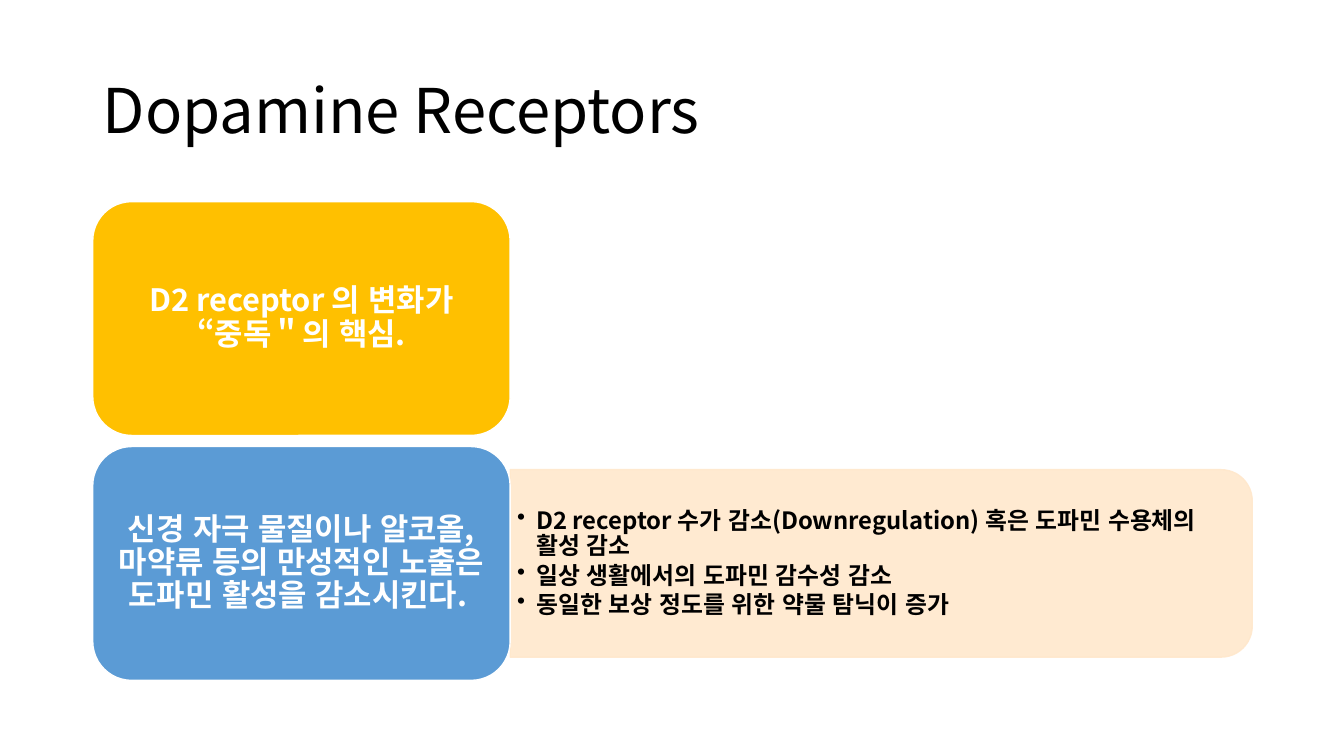
from lxml.etree import SubElement
from pptx import Presentation
from pptx.dml.color import RGBColor
from pptx.enum.lang import MSO_LANGUAGE_ID as Language
from pptx.enum.shapes import MSO_SHAPE as Shape
from pptx.enum.text import MSO_ANCHOR as Anchor, PP_ALIGN as Align
from pptx.oxml.ns import qn
from pptx.util import Inches, Pt

FONT = "Noto Sans CJK KR"
BLACK = RGBColor(0x00, 0x00, 0x00)
WHITE = RGBColor(0xFF, 0xFF, 0xFF)
GOLD = RGBColor(0xFF, 0xC0, 0x00)
BLUE = RGBColor(0x5B, 0x9B, 0xD5)
PEACH = RGBColor(0xFF, 0xE8, 0xCC)

LEFT, CARDS_TOP = 0.92, 2
CARD_WIDTH, CARD_HEIGHT, CARD_PITCH = 4.14, 2.32, 2.43
PANEL_WIDTH, PANEL_HEIGHT = 7.36, 1.86

CARDS = [
    (GOLD, "D2 receptor 의 변화가 “중독＂의 핵심.", []),
    (BLUE, "신경 자극 물질이나 알코올, 마약류 등의 만성적인 노출은 도파민 활성을 감소시킨다. ", [
        "D2 receptor 수가 감소(Downregulation) 혹은 도파민 수용체의 활성 감소",
        "일상 생활에서의 도파민 감수성 감소",
        "동일한 보상 정도를 위한 약물 탐닉이 증가",
    ]),
]


def set_frame(frame, side=0.1, edge=0.05):
    """Wrap the text, centre it vertically and set its margins."""
    frame.word_wrap = True
    frame.vertical_anchor = Anchor.MIDDLE
    frame.margin_left = frame.margin_right = Inches(side)
    frame.margin_top = frame.margin_bottom = Inches(edge)


def write(paragraph, text, size, color, bold=False, align=Align.LEFT):
    """Write one run with Latin and East Asian fonts."""
    paragraph.alignment = align
    paragraph.line_spacing = 0.9
    run = paragraph.add_run()
    run.text = text
    font = run.font
    font.name, font.size, font.bold = FONT, Pt(size), bold
    font.color.rgb = color
    font.language_id = Language.KOREAN
    SubElement(font._element, qn("a:ea")).set("typeface", FONT)


def add_bullet(paragraph):
    """Give the paragraph a bullet with a hanging indent."""
    properties = paragraph._p.get_or_add_pPr()
    properties.set("marL", str(Inches(0.19)))
    properties.set("indent", str(Inches(-0.19)))
    SubElement(properties, qn("a:buChar")).set("char", "•")


def add_block(slide, preset, box, fill, line):
    """Add a filled shape without a shadow."""
    shape = slide.shapes.add_shape(preset, *map(Inches, box))
    shape.shadow.inherit = False
    shape.fill.solid()
    shape.fill.fore_color.rgb = fill
    shape.line.color.rgb = line
    shape.line.width = Pt(1)
    return shape


def add_title(slide, left, top, width, height):
    """Add the slide title."""
    title = slide.shapes.add_textbox(*map(Inches, (left, top, width, height)))
    set_frame(title.text_frame)
    write(title.text_frame.paragraphs[0], "Dopamine Receptors", 44, BLACK)


def add_card(slide, left, top, width, height, fill, text):
    """Add a rounded card with a bold centred statement."""
    card = add_block(slide, Shape.ROUNDED_RECTANGLE, (left, top, width, height), fill, WHITE)
    set_frame(card.text_frame, 0.09, 0.05)
    write(card.text_frame.paragraphs[0], text, 22, WHITE, True, Align.CENTER)


def add_panel(slide, left, top, width, height, points):
    """Add a panel rounded on its right side, with bullet points."""
    turned_box = (left + (width - height) / 2, top + (height - width) / 2, height, width)
    panel = add_block(slide, Shape.ROUND_2_SAME_RECTANGLE, turned_box, PEACH, PEACH)
    panel.rotation = 90
    for color in panel._element.spPr.iter(qn("a:srgbClr")):
        SubElement(color, qn("a:alpha")).set("val", "90000")

    inset = 0.09
    text_box = (left, top + inset, width - inset, height - 2 * inset)
    frame = slide.shapes.add_textbox(*map(Inches, text_box)).text_frame
    set_frame(frame, 0.07, 0.04)
    for index, point in enumerate(points):
        paragraph = frame.add_paragraph() if index else frame.paragraphs[0]
        write(paragraph, point, 17, BLACK, True)
        paragraph.space_after = Pt(2.55)
        add_bullet(paragraph)


def main():
    """Build and save the slide."""
    presentation = Presentation()
    presentation.slide_width = Inches(13.33)
    presentation.slide_height = Inches(7.5)
    slide = presentation.slides.add_slide(presentation.slide_layouts[6])
    add_title(slide, LEFT, 0.4, 11.5, 1.45)
    for index, (fill, statement, points) in enumerate(CARDS):
        top = CARDS_TOP + index * CARD_PITCH
        if points:
            panel_top = top + (CARD_HEIGHT - PANEL_HEIGHT) / 2
            add_panel(slide, LEFT + CARD_WIDTH, panel_top, PANEL_WIDTH, PANEL_HEIGHT, points)
        add_card(slide, LEFT, top, CARD_WIDTH, CARD_HEIGHT, fill, statement)
    presentation.save("out.pptx")


if __name__ == "__main__":
    main()
